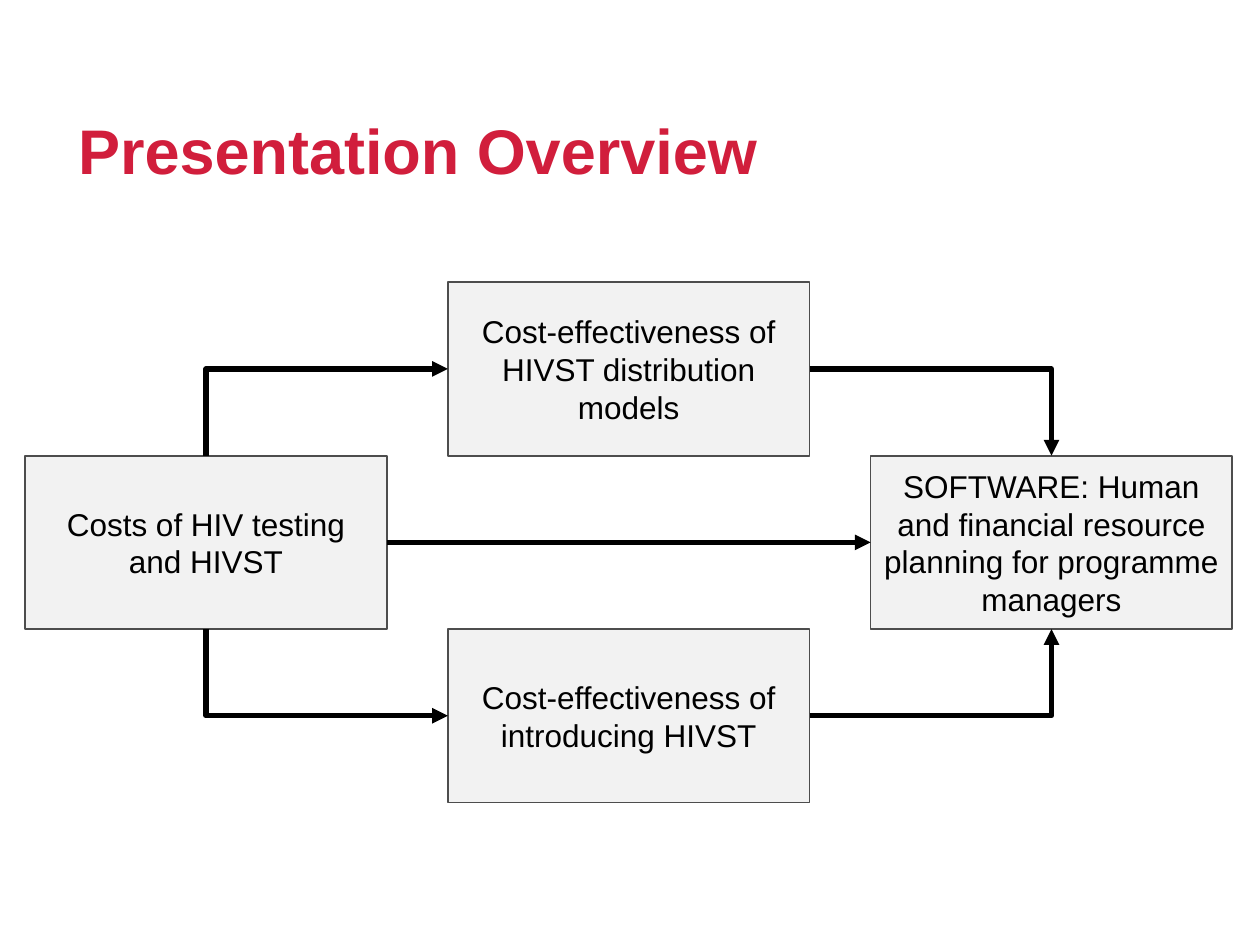
from lxml.etree import SubElement
from pptx import Presentation
from pptx.dml.color import RGBColor
from pptx.enum.shapes import MSO_CONNECTOR, MSO_SHAPE
from pptx.enum.text import MSO_ANCHOR, PP_ALIGN
from pptx.oxml.ns import qn
from pptx.util import Inches, Pt

RED = RGBColor(0xD1, 0x1E, 0x3C)
BLACK = RGBColor(0, 0, 0)
PALE = RGBColor(0xF2, 0xF2, 0xF2)
GREY = RGBColor(0x4D, 0x4D, 0x4D)

HEAD = {"name": "Arial", "size": Pt(36), "bold": True}
BODY = {"name": "Arial", "size": Pt(18), "bold": False}

# Connection sites of a rectangle
TOP, LEFT, BOTTOM, RIGHT = range(4)

# Name: column, row, text
STEPS = {
    "costs": (0, 1, "Costs of HIV testing and HIVST"),
    "models": (1, 0, "Cost-effectiveness of HIVST distribution models"),
    "intro": (1, 2, "Cost-effectiveness of introducing HIVST"),
    "plan": (2, 1, "SOFTWARE: Human and financial resource planning "
                   "for programme managers"),
}

# Start, site, end, site, preset, arrowhead; bends leave their start sideways
LINKS = [
    ("models", LEFT, "costs", TOP, "bentConnector2", "headEnd"),
    ("intro", LEFT, "costs", BOTTOM, "bentConnector2", "headEnd"),
    ("costs", RIGHT, "plan", LEFT, "straightConnector1", "tailEnd"),
    ("models", RIGHT, "plan", TOP, "bentConnector2", "tailEnd"),
    ("intro", RIGHT, "plan", BOTTOM, "bentConnector2", "tailEnd"),
]


def set_text(frame, text, style, color, align):
    frame.word_wrap = True
    frame.vertical_anchor = MSO_ANCHOR.MIDDLE
    para = frame.paragraphs[0]
    para.alignment = align
    run = para.add_run()
    run.text = text
    for key, value in style.items():
        setattr(run.font, key, value)
    run.font.color.rgb = color
    return para


def add_title(slide, left, top, width, height):
    title = slide.shapes.title
    title.left, title.top, title.width, title.height = left, top, width, height
    para = set_text(title.text_frame, "Presentation Overview", HEAD, RED,
                    PP_ALIGN.LEFT)
    para.line_spacing = 0.9


def add_step(slide, text, left, top, width, height):
    step = slide.shapes.add_shape(MSO_SHAPE.RECTANGLE, left, top, width, height)
    step.shadow.inherit = False
    step.fill.solid()
    step.fill.fore_color.rgb = PALE
    step.line.color.rgb = GREY
    step.line.width = Pt(1)
    set_text(step.text_frame, text, BODY, BLACK, PP_ALIGN.CENTER)
    return step


def add_link(slide, start, out, end, into, preset, arrow):
    link = slide.shapes.add_connector(MSO_CONNECTOR.STRAIGHT, 0, 0, 0, 0)
    link.begin_connect(start, out)
    link.end_connect(end, into)
    link.line.color.rgb = BLACK
    link.line.width = Pt(3)
    props = link._element.spPr
    props.find(qn("a:prstGeom")).set("prst", preset)
    SubElement(props.find(qn("a:ln")), qn("a:" + arrow), type="triangle")
    SubElement(props, qn("a:effectLst"))


def add_flow(slide, left, top, width, height):
    # Three columns with equal gaps, three rows that touch
    wide, high = Inches(2.87), height // 3
    pitch = (width - wide) // 2
    boxes = {
        name: add_step(slide, text, left + col * pitch, top + row * high,
                       wide, high)
        for name, (col, row, text) in STEPS.items()
    }
    for start, out, end, into, preset, arrow in LINKS:
        add_link(slide, boxes[start], out, boxes[end], into, preset, arrow)


def main():
    deck = Presentation()
    deck.slide_width, deck.slide_height = Inches(10), Inches(7.5)
    slide = deck.slides.add_slide(deck.slide_layouts[5])
    add_title(slide, Inches(0.52), Inches(0.59), Inches(8.62), Inches(1.26))
    add_flow(slide, Inches(0.2), Inches(2.24), Inches(9.58), Inches(4.13))
    deck.save("out.pptx")


if __name__ == "__main__":
    main()
